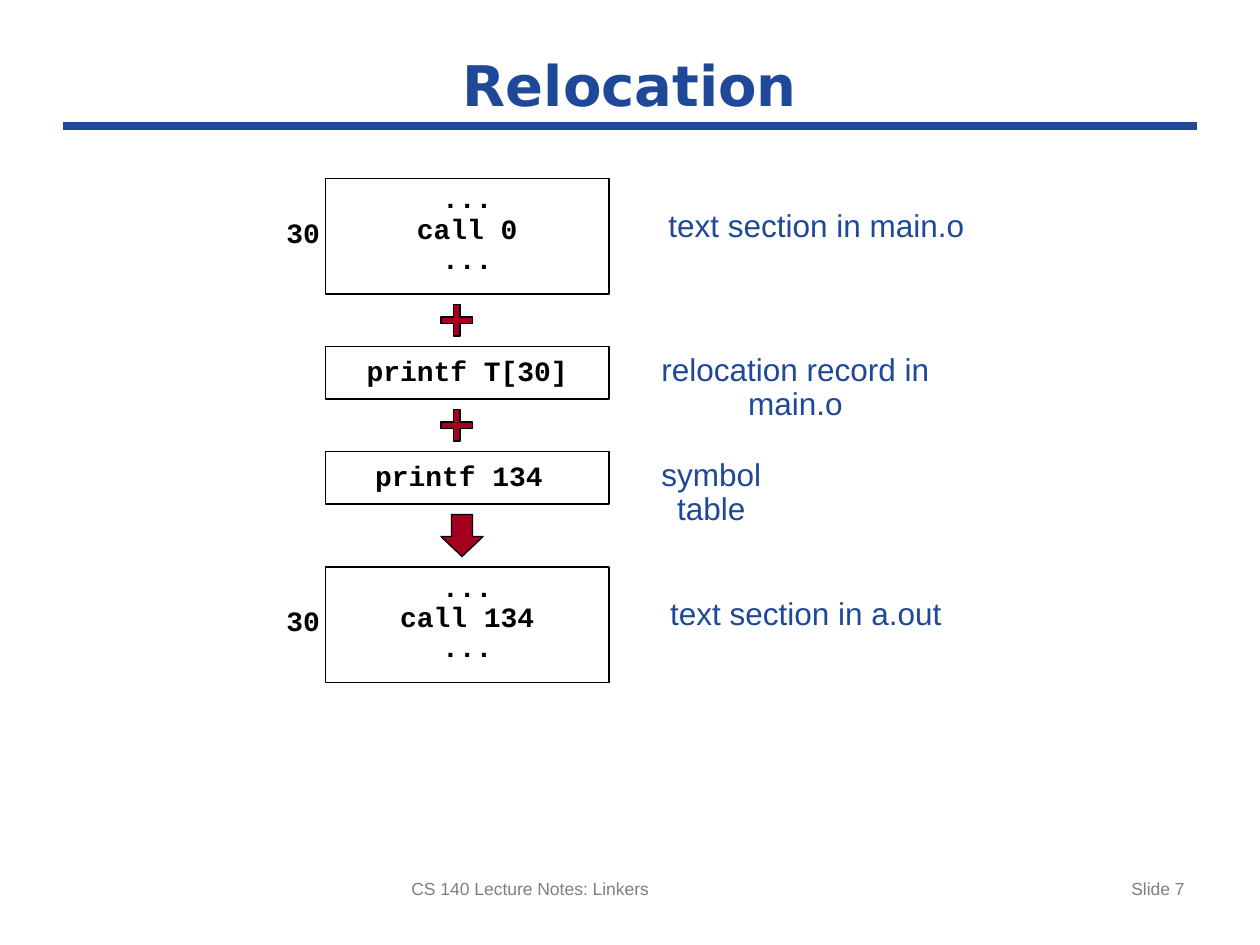
"""Build the Relocation slide: a column of code boxes joined by plus signs and an arrow."""
from dataclasses import dataclass

from lxml.etree import SubElement
from pptx import Presentation
from pptx.dml.color import RGBColor
from pptx.enum.shapes import MSO_CONNECTOR, MSO_SHAPE
from pptx.enum.text import MSO_ANCHOR, PP_ALIGN
from pptx.oxml.ns import qn
from pptx.util import Pt

PX = 9525


@dataclass(frozen=True)
class Theme:
    blue: RGBColor = RGBColor(0x1F, 0x48, 0x99)
    red: RGBColor = RGBColor(0xA5, 0x00, 0x1E)
    gray: RGBColor = RGBColor(0x7F, 0x7F, 0x7F)
    black: RGBColor = RGBColor(0x00, 0x00, 0x00)
    white: RGBColor = RGBColor(0xFF, 0xFF, 0xFF)
    title_size: int = 32
    label_size: int = 18
    code_size: int = 16
    footer_size: int = 10
    title_font: str = "DejaVu Sans"
    body_font: str = "Arial"
    code_font: str = "Courier New"


theme = Theme()
presentation = Presentation()
presentation.slide_width = 960 * PX
presentation.slide_height = 720 * PX
slide = presentation.slides.add_slide(presentation.slide_layouts[6])


def write_text(text, box=None, shape=None, font=theme.body_font, size=theme.label_size,
               color=theme.blue, bold=False, align=PP_ALIGN.CENTER,
               anchor=MSO_ANCHOR.TOP, spacing=None, inset=True):
    if shape is None:
        shape = slide.shapes.add_textbox(*(value * PX for value in box))
    frame = shape.text_frame
    frame.word_wrap = True
    frame.vertical_anchor = anchor
    if not inset:
        frame.margin_left = frame.margin_top = frame.margin_right = frame.margin_bottom = 0
    frame.text = text
    for paragraph in frame.paragraphs:
        paragraph.alignment = align
        paragraph.line_spacing = spacing
        for run in paragraph.runs:
            run.font.name = font
            run.font.size = Pt(size)
            run.font.bold = bold
            run.font.color.rgb = color


def add_outlined(kind, box, fill, width):
    shape = slide.shapes.add_shape(kind, *(value * PX for value in box))
    shape.shadow.inherit = False
    shape.fill.solid()
    shape.fill.fore_color.rgb = fill
    shape.line.color.rgb = theme.black
    shape.line.width = Pt(width)
    return shape


title_rule = slide.shapes.add_connector(MSO_CONNECTOR.STRAIGHT, 48 * PX, 96 * PX, 912 * PX, 96 * PX)
title_rule.line.color.rgb = theme.blue
title_rule.line.width = Pt(4.5)
SubElement(title_rule._element.spPr, qn("a:effectLst"))

write_text("Relocation", box=(48, 32, 864, 64), font=theme.title_font,
           size=theme.title_size, bold=True, anchor=MSO_ANCHOR.MIDDLE)

footer = {"size": theme.footer_size, "color": theme.gray}
write_text("CS 140 Lecture Notes: Linkers", box=(304, 664, 360, 41), align=PP_ALIGN.LEFT, **footer)
write_text("Slide 7", box=(688, 664, 224, 41), align=PP_ALIGN.RIGHT, **footer)

code = {"font": theme.code_font, "size": theme.code_size, "color": theme.black,
        "bold": True, "spacing": 0.9}
plus = (MSO_SHAPE.CROSS, 24, (0.396,))
arrow = (MSO_SHAPE.DOWN_ARROW, 32, (0.5, 0.474))
stages = [
    ("...\ncall 0\n...", 88, "30", "text section in main.o", (506, 24, 232), plus),
    ("printf T[30]", 40, None, "relocation record in main.o", (498, 6, 216), plus),
    ("printf 134 ", 40, None, "symbol table", (498, 6, 88), arrow),
    ("...\ncall 134\n...", 88, "30", "text section in a.out", (506, 24, 216), None),
]
gap = 8
top = 136
for content, height, address, label, (left, offset, width), symbol in stages:
    code_box = add_outlined(MSO_SHAPE.RECTANGLE, (248, top, 216, height), theme.white, 1)
    anchor = MSO_ANCHOR.TOP if address else MSO_ANCHOR.MIDDLE
    write_text(content, shape=code_box, anchor=anchor, **code)
    if address:
        write_text(address, box=(203, top + 3, 56, 79), anchor=MSO_ANCHOR.MIDDLE, **code)
    write_text(label, box=(left, top + offset, width, 26), spacing=0.9, inset=False)
    top += height + gap
    if symbol:
        kind, side, adjustments = symbol
        mark = add_outlined(kind, (336, top, side, side), theme.red, 0.75)
        for index, value in enumerate(adjustments):
            mark.adjustments[index] = value
        top += side + gap

presentation.save("out.pptx")
